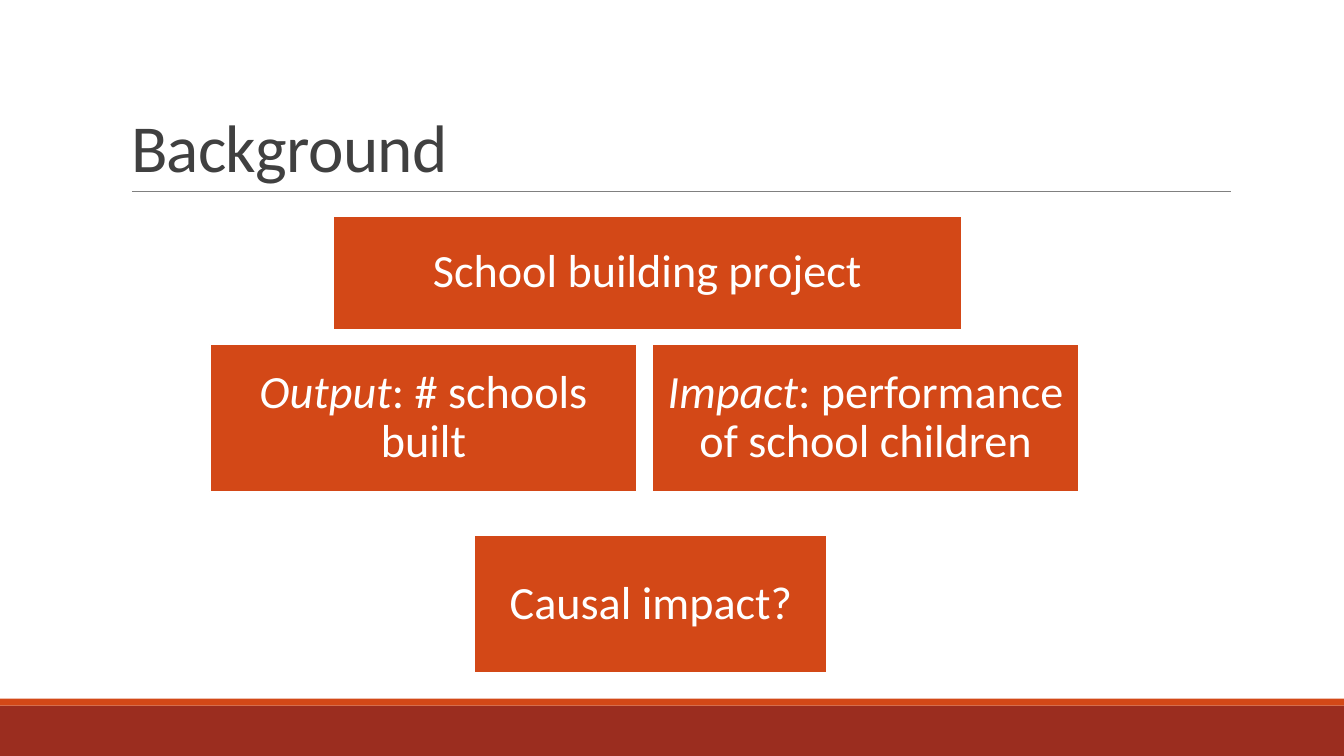
"""Build the Background slide on a school building project."""
import pptx
import pptx.dml.color
import pptx.enum.shapes
import pptx.enum.text
import pptx.oxml.ns
import pptx.util

Pt = pptx.util.Pt
ANCHOR = pptx.enum.text.MSO_ANCHOR
ALIGN = pptx.enum.text.PP_ALIGN
COLOURS = {
    "orange": "D34817",
    "brick": "9B2D1F",
    "rule": "808080",
    "title": "404040",
    "white": "FFFFFF",
}


def colour(name):
    return pptx.dml.color.RGBColor.from_string(COLOURS[name])


def format_span(span, size, colour_name):
    span.font.name = "Calibri"
    span.font.size = Pt(size)
    span.font.color.rgb = colour(colour_name)


def add_rectangle(page, left, top, width, height, fill):
    box = page.shapes.add_shape(
        pptx.enum.shapes.MSO_SHAPE.RECTANGLE, Pt(left), Pt(top), Pt(width), Pt(height)
    )
    box.shadow.inherit = False
    box.fill.solid()
    box.fill.fore_color.rgb = colour(fill)
    box.line.fill.background()
    return box


def add_rule(page, left, right, top):
    rule = page.shapes.add_connector(
        pptx.enum.shapes.MSO_CONNECTOR.STRAIGHT, Pt(left), Pt(top), Pt(right), Pt(top)
    )
    rule.line.color.rgb = colour("rule")
    rule.line.width = Pt(0.5)
    properties = rule._element.spPr
    properties.append(properties.makeelement(pptx.oxml.ns.qn("a:effectLst"), {}))


def set_title(page, text):
    title = page.shapes.title
    title.left, title.top, title.width, title.height = Pt(86.4), Pt(22.3), Pt(792), Pt(114.5)
    frame = title.text_frame
    frame.text = text
    frame.auto_size = pptx.enum.text.MSO_AUTO_SIZE.NONE
    frame.vertical_anchor = ANCHOR.BOTTOM
    para = frame.paragraphs[0]
    para.alignment = ALIGN.LEFT
    para.line_spacing = 0.85
    span = para.runs[0]
    format_span(span, 48, "title")
    span._r.get_or_add_rPr().set("spc", "-50")


def add_card(page, left, top, width, height, text, term=""):
    card = add_rectangle(page, left, top, width, height, "orange")
    card.line.color.rgb = colour("white")
    card.line.width = Pt(1.25)
    frame = card.text_frame
    frame.word_wrap = True
    frame.vertical_anchor = ANCHOR.MIDDLE
    frame.margin_left = frame.margin_right = Pt(9.9)
    frame.margin_top = frame.margin_bottom = Pt(9.9)
    para = frame.paragraphs[0]
    para.alignment = ALIGN.CENTER
    para.line_spacing = 0.9
    for words, italic in ((term, True), (text, False)):
        if words:
            span = para.add_run()
            span.text = words
            format_span(span, 33, "white")
            span.font.italic = italic


def main():
    deck = pptx.Presentation()
    deck.slide_width, deck.slide_height = Pt(960), Pt(540)
    page = deck.slides.add_slide(deck.slide_layouts[5])

    add_rectangle(page, 0, 504, 960, 36, "brick")
    add_rectangle(page, 0, 499, 960, 5, "orange")
    add_rule(page, 94.3, 879, 136.8)
    set_title(page, "Background")

    add_card(page, 237.9, 154.3, 449, 81.2, "School building project")
    measures = (
        ("Output", ": # schools built"),
        ("Impact", ": performance of school children"),
    )
    for column, (term, text) in enumerate(measures):
        add_card(page, 150 + column * 315.9, 246, 305, 105.2, text, term)
    add_card(page, 339, 382.2, 252, 98.5, "Causal impact?")

    deck.save("out.pptx")


if __name__ == "__main__":
    main()
